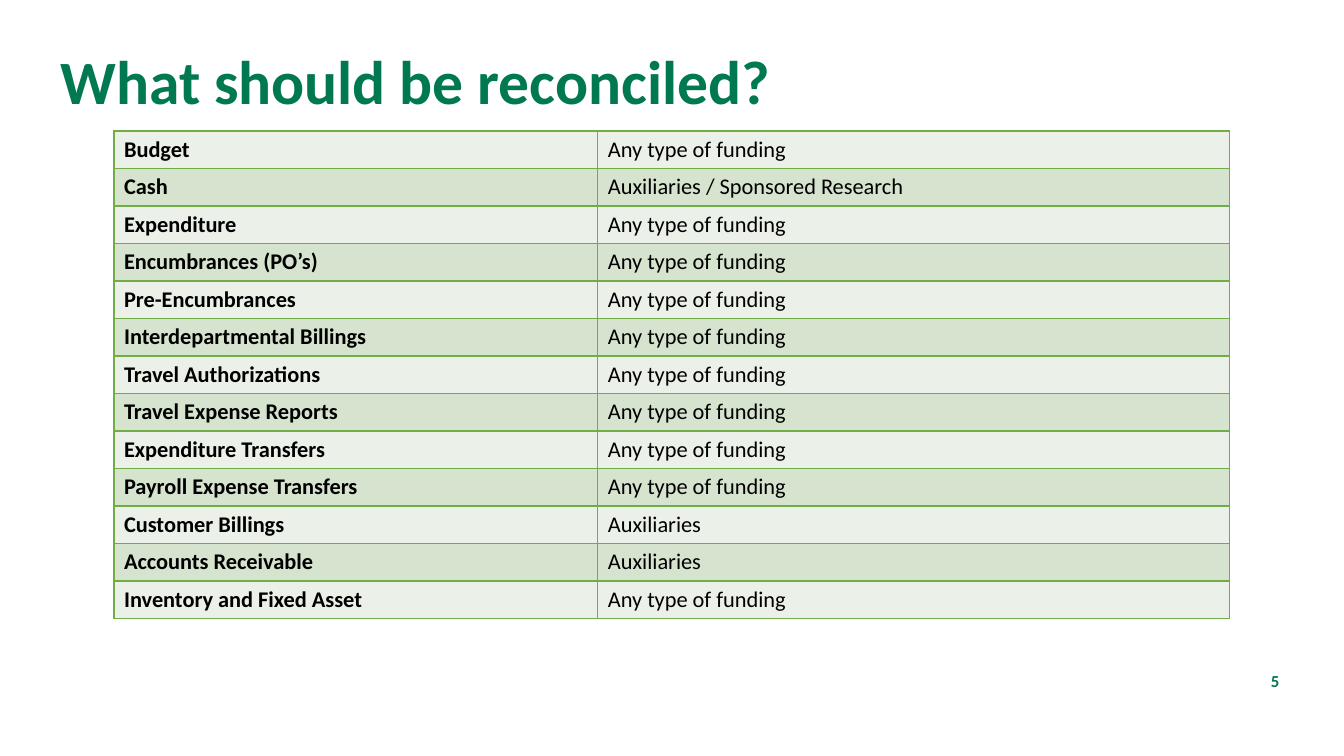
from lxml import etree
from pptx import Presentation
from pptx.dml.color import RGBColor
from pptx.enum.text import MSO_ANCHOR, PP_ALIGN
from pptx.oxml.ns import qn
from pptx.util import Pt

TOP, MIDDLE = MSO_ANCHOR.TOP, MSO_ANCHOR.MIDDLE
LEFT, RIGHT = PP_ALIGN.LEFT, PP_ALIGN.RIGHT

GREEN, BORDER, BLACK = "007851", "70AD47", "000000"
BANDS = ("EBF1E9", "D5E3CF")

ANY = "Any type of funding"
RECONCILED_ITEMS = [
    ("Budget", ANY),
    ("Cash", "Auxiliaries / Sponsored Research"),
    ("Expenditure", ANY),
    ("Encumbrances (PO’s)", ANY),
    ("Pre-Encumbrances", ANY),
    ("Interdepartmental Billings", ANY),
    ("Travel Authorizations", ANY),
    ("Travel Expense Reports", ANY),
    ("Expenditure Transfers", ANY),
    ("Payroll Expense Transfers", ANY),
    ("Customer Billings", "Auxiliaries"),
    ("Accounts Receivable", "Auxiliaries"),
    ("Inventory and Fixed Asset", ANY),
]


def rgb(value):
    return RGBColor.from_string(value)


def write(frame, text, *, size, color=BLACK, bold=False, align=LEFT,
          spacing=1.0, font="Calibri"):
    paragraph = frame.paragraphs[0]
    paragraph.alignment = align
    paragraph.line_spacing = spacing
    run = paragraph.add_run()
    run.text = text
    run.font.name = font
    run.font.size = Pt(size)
    run.font.bold = bold
    run.font.color.rgb = rgb(color)


class Deck:
    """Holds the table style and the current slide."""

    def __init__(self, slide, border, bands):
        self.slide, self.border, self.bands = slide, border, bands

    def text(self, x, y, width, height, text, anchor=TOP, **style):
        box = self.slide.shapes.add_textbox(Pt(x), Pt(y), Pt(width), Pt(height))
        box.text_frame.word_wrap = True
        box.text_frame.vertical_anchor = anchor
        write(box.text_frame, text, **style)

    def outline(self, cell):
        properties = cell._tc.get_or_add_tcPr()
        for index, side in enumerate(("a:lnL", "a:lnR", "a:lnT", "a:lnB")):
            line = etree.Element(qn(side), w=str(Pt(1)))
            fill = etree.SubElement(line, qn("a:solidFill"))
            etree.SubElement(fill, qn("a:srgbClr"), val=self.border)
            properties.insert(index, line)

    def table(self, x, y, widths, row_height, rows, size):
        table = self.slide.shapes.add_table(
            len(rows), len(widths), Pt(x), Pt(y),
            Pt(sum(widths)), Pt(row_height * len(rows))).table
        table.first_row = table.horz_banding = False
        for column, width in zip(table.columns, widths):
            column.width = Pt(width)
        for r, values in enumerate(rows):
            table.rows[r].height = Pt(row_height)
            for c, value in enumerate(values):
                cell = table.cell(r, c)
                cell.fill.solid()
                cell.fill.fore_color.rgb = rgb(self.bands[r % len(self.bands)])
                self.outline(cell)
                write(cell.text_frame, value, size=size, bold=c == 0)


def main():
    presentation = Presentation()
    presentation.slide_width, presentation.slide_height = Pt(960), Pt(540)
    slide = presentation.slides.add_slide(presentation.slide_layouts[6])
    deck = Deck(slide, BORDER, BANDS)

    # Title
    deck.text(36, 33.1, 885, 61.2, "What should be reconciled?",
              size=44, color=GREEN, bold=True, spacing=0.9)

    # Items to reconcile and the funding they apply to
    deck.table(81.4, 93.6, (345.6, 451.4), 26.8, RECONCILED_ITEMS, size=16)

    # Page number
    deck.text(854, 476, 67, 21, "5", anchor=MIDDLE,
              size=12, color=GREEN, bold=True, align=RIGHT)

    presentation.save("out.pptx")


if __name__ == "__main__":
    main()
